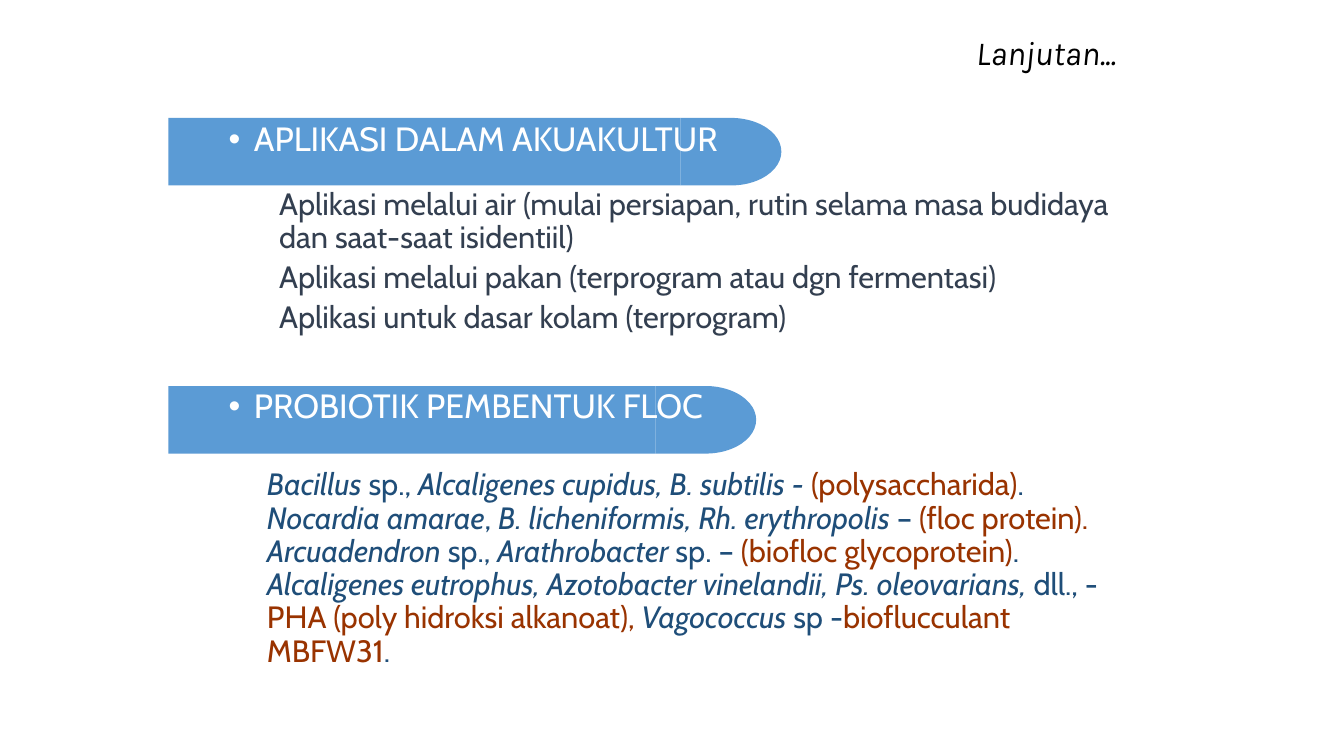
from lxml import etree
from pptx import Presentation
from pptx.dml.color import RGBColor
from pptx.enum import shapes, text
from pptx.oxml import ns
from pptx.util import Inches, Pt

BLUE = RGBColor(0x5B, 0x9B, 0xD5)
WHITE = RGBColor(0xFF, 0xFF, 0xFF)
BLACK = RGBColor(0, 0, 0)
SLATE = RGBColor(0x33, 0x3F, 0x50)
NAVY = RGBColor(0x1F, 0x4E, 0x79)
RUST = RGBColor(0x99, 0x33, 0x00)

APPLICATIONS = [
    "Aplikasi melalui air (mulai persiapan, rutin selama masa budidaya dan saat-saat isidentiil)",
    "Aplikasi melalui pakan (terprogram atau dgn fermentasi)",
    "Aplikasi untuk dasar kolam (terprogram)",
]
SPECIES = [
    ("Bacillus ", NAVY, True),
    ("sp., ", NAVY, False),
    ("Alcaligenes cupidus, B. subtilis - ", NAVY, True),
    ("(polysaccharida)", RUST, False),
    (". ", NAVY, False),
    ("Nocardia amarae", NAVY, True),
    (", ", NAVY, False),
    ("B. licheniformis, Rh. erythropolis ", NAVY, True),
    ("– ", NAVY, False),
    ("(floc protein). ", RUST, False),
    ("Arcuadendron ", NAVY, True),
    ("sp., ", NAVY, False),
    ("Arathrobacter ", NAVY, True),
    ("sp. – ", NAVY, False),
    ("(biofloc glycoprotein)", RUST, False),
    (". ", NAVY, False),
    ("Alcaligenes eutrophus, Azotobacter vinelandii, Ps. oleovarians,", NAVY, True),
    (" dll., -", NAVY, False),
    (" PHA (poly hidroksi alkanoat), ", RUST, False),
    ("Vagococcus ", NAVY, True),
    ("sp -", NAVY, False),
    ("bioflucculant MBFW31", RUST, False),
    (".", NAVY, False),
]


def add_title(page, left, top, width, height):
    """Place the right-aligned continuation title."""
    title = page.shapes.title
    title.left, title.top = Inches(left), Inches(top)
    title.width, title.height = Inches(width), Inches(height)
    frame = title.text_frame
    frame.text = "Lanjutan..."
    frame.auto_size = text.MSO_AUTO_SIZE.NONE
    frame.vertical_anchor = text.MSO_ANCHOR.MIDDLE
    para = frame.paragraphs[0]
    para.alignment = text.PP_ALIGN.RIGHT
    para.line_spacing = 0.9
    para.font.name, para.font.size = "Karla", Pt(24)
    para.font.italic = True
    para.font.color.rgb = BLACK


def add_banner(page, left, top, width, height, cap=1):
    """Draw a heading bar whose right end is a rounded cap."""
    kinds = shapes.MSO_SHAPE
    bar = width - cap
    for kind, start, length in ((kinds.RECTANGLE, left, bar),
                                (kinds.FLOWCHART_DELAY, left + bar, cap)):
        part = page.shapes.add_shape(kind, Inches(start), Inches(top),
                                     Inches(length), Inches(height))
        part.shadow.inherit = False
        part.fill.solid()
        part.fill.fore_color.rgb = BLUE
        part.line.fill.background()


def add_paragraph(frame, size, before, margin, color=None, words=""):
    """Append a paragraph, using the empty first one when it is free."""
    first = frame.paragraphs[0]
    para = frame.add_paragraph() if first.runs else first
    para.line_spacing = 0.9
    para.space_before = Pt(before)
    properties = para._p.get_or_add_pPr()
    properties.set("marL", str(Inches(margin)))
    properties.set("indent", "0")
    para.font.name, para.font.size = "Cabin", Pt(size)
    if color is not None:
        para.font.color.rgb = color
        para.add_run().text = words
    return para


def add_heading(frame, words, before=0):
    """Append a white bulleted heading."""
    para = add_paragraph(frame, 24, before, 0.25, WHITE, words)
    properties = para._p.get_or_add_pPr()
    properties.set("indent", str(Inches(-0.25)))
    font = properties.find(ns.qn("a:defRPr"))
    tint = etree.Element(ns.qn("a:buClr"))
    etree.SubElement(tint, ns.qn("a:srgbClr")).set("val", str(WHITE))
    face = etree.Element(ns.qn("a:buFont"))
    face.set("typeface", "Arial")
    bullet = etree.Element(ns.qn("a:buChar"))
    bullet.set("char", "•")
    for element in (tint, face, bullet):
        font.addprevious(element)


def add_body(page, left, top, width, height):
    """Write both headings with the text that belongs to each."""
    box = page.shapes.add_textbox(Inches(left), Inches(top), Inches(width), Inches(height))
    frame = box.text_frame
    frame.word_wrap = True
    add_heading(frame, "APLIKASI DALAM AKUAKULTUR")
    for index, words in enumerate(APPLICATIONS):
        add_paragraph(frame, 22, 5 if index else 21, 0.5, SLATE, words)
    add_heading(frame, "PROBIOTIK PEMBENTUK FLOC", 38.5)
    para = add_paragraph(frame, 22, 31, 0.38)
    for words, color, italic in SPECIES:
        span = para.add_run()
        span.text = words
        span.font.color.rgb = color
        span.font.italic = italic


def main():
    """Build the slide and save it."""
    deck = Presentation()
    deck.slide_width, deck.slide_height = Inches(13.33), Inches(7.5)
    page = deck.slides.add_slide(deck.slide_layouts[5])
    add_banner(page, 1.67, 1.17, 6.08, 0.67)
    add_banner(page, 1.67, 3.83, 5.83, 0.67)
    add_title(page, 2.17, -0.08, 9, 1.25)
    add_body(page, 2.17, 1.17, 9, 6.08)
    deck.save("out.pptx")


if __name__ == "__main__":
    main()
